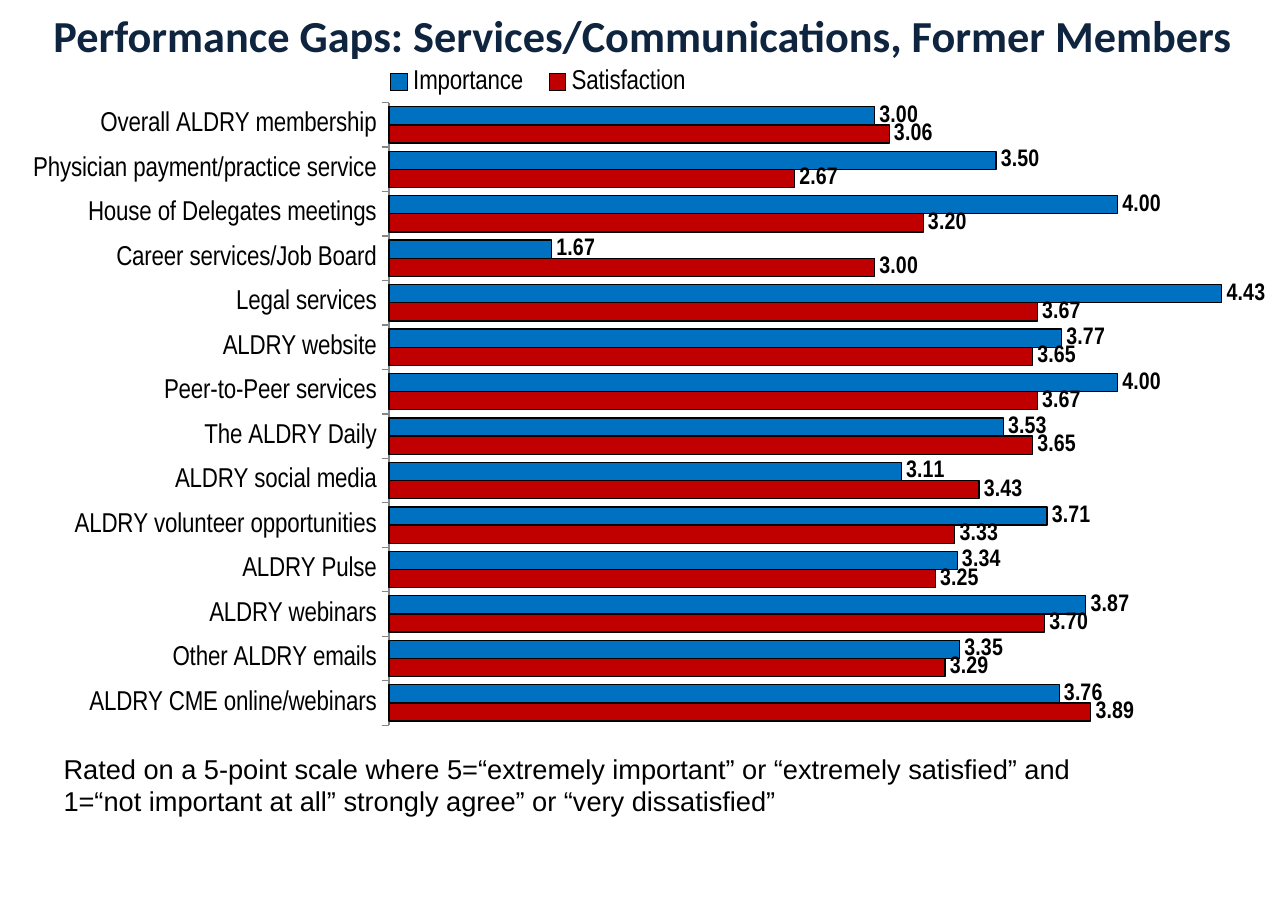
from lxml import etree
from pptx import Presentation
from pptx.chart.data import CategoryChartData
from pptx.dml.color import RGBColor
from pptx.enum.chart import XL_CHART_TYPE, XL_LABEL_POSITION, XL_LEGEND_POSITION, XL_TICK_MARK
from pptx.enum.text import MSO_ANCHOR, PP_ALIGN
from pptx.oxml.ns import qn
from pptx.util import Inches, Pt

BAR_CLUSTERED = XL_CHART_TYPE.BAR_CLUSTERED
OUTSIDE_END = XL_LABEL_POSITION.OUTSIDE_END
LEGEND_RIGHT = XL_LEGEND_POSITION.RIGHT
TICK_OUT, TICK_NONE = XL_TICK_MARK.OUTSIDE, XL_TICK_MARK.NONE
MIDDLE, CENTER = MSO_ANCHOR.MIDDLE, PP_ALIGN.CENTER

NAVY = RGBColor(0x0F, 0x24, 0x3E)
BLACK = RGBColor(0, 0, 0)
GRAY = RGBColor(0x86, 0x86, 0x86)
RED = RGBColor(0xC0, 0, 0)
BLUE = RGBColor(0, 0x70, 0xC0)

RATINGS = [
    ("ALDRY CME online/webinars", 3.89, 3.76),
    ("Other ALDRY emails", 3.29, 3.35),
    ("ALDRY webinars", 3.70, 3.87),
    ("ALDRY Pulse", 3.25, 3.34),
    ("ALDRY volunteer opportunities", 3.33, 3.71),
    ("ALDRY social media", 3.43, 3.11),
    ("The ALDRY Daily", 3.65, 3.53),
    ("Peer-to-Peer services", 3.67, 4.00),
    ("ALDRY website", 3.65, 3.77),
    ("Legal services", 3.67, 4.43),
    ("Career services/Job Board", 3.00, 1.67),
    ("House of Delegates meetings", 3.20, 4.00),
    ("Physician payment/practice service", 2.67, 3.50),
    ("Overall ALDRY membership", 3.06, 3.00),
]


def set_font(font, name, size, color, bold=False):
    font.name = name
    font.size = Pt(size)
    font.color.rgb = color
    font.bold = bold


def set_layout(parent, index, x, y, w, h, inner=False):
    for old in parent.findall(qn("c:layout")):
        parent.remove(old)
    layout = etree.Element(qn("c:layout"))
    manual = etree.SubElement(layout, qn("c:manualLayout"))
    settings = [("xMode", "edge"), ("yMode", "edge"), ("x", x), ("y", y), ("w", w), ("h", h)]
    if inner:
        settings.insert(0, ("layoutTarget", "inner"))
    for tag, value in settings:
        etree.SubElement(manual, qn("c:" + tag)).set("val", str(value))
    parent.insert(index, layout)


prs = Presentation()
prs.slide_width, prs.slide_height = Inches(10.5), Inches(7.5)
slide = prs.slides.add_slide(prs.slide_layouts[5])

categories, satisfaction, importance = zip(*RATINGS)
data = CategoryChartData(number_format="0.00")
data.categories = categories
data.add_series("Satisfaction", satisfaction)
data.add_series("Importance", importance)
chart = slide.shapes.add_chart(
    BAR_CLUSTERED, Inches(-0.08), Inches(0.56), Inches(11.17), Inches(5.44), data
).chart
chart.has_title = False
set_font(chart.font, "Calibri", 16, BLACK)

plot = chart.plots[0]
plot.gap_width = 45
plot.overlap = 0
plot.vary_by_categories = False
for series, color in zip(plot.series, (RED, BLUE)):
    series.format.fill.solid()
    series.format.fill.fore_color.rgb = color
    series.format.line.color.rgb = BLACK
    series.format.line.width = Pt(0.75)
    labels = series.data_labels
    labels.show_value = True
    labels.number_format = "0.00"
    labels.number_format_is_linked = False
    labels.position = OUTSIDE_END
    set_font(labels.font, "Arial Narrow", 14, BLACK, True)

axis = chart.category_axis
axis.major_tick_mark = TICK_OUT
axis.minor_tick_mark = TICK_NONE
axis.format.line.color.rgb = GRAY
set_font(axis.tick_labels.font, "Arial Narrow", 16, BLACK)

axis = chart.value_axis
axis.minimum_scale, axis.maximum_scale, axis.major_unit = 1, 5, 1
axis.has_major_gridlines = False
axis.visible = False

chart.has_legend = True
legend = chart.legend
legend.position = LEGEND_RIGHT
legend.include_in_layout = False
set_font(legend.font, "Arial Narrow", 16, BLACK)
set_layout(legend._element, 1, 0.28, 0, 0.24, 0.04)
set_layout(chart._chartSpace.chart.plotArea, 0, 0.291, 0.051, 0.709, 0.933, True)

title = slide.shapes.title
title.left, title.top, title.width, title.height = Inches(0.08), Inches(0.02), Inches(10.33), Inches(0.53)
tf = title.text_frame
tf.text = "Performance Gaps: Services/Communications, Former Members"
tf.vertical_anchor = MIDDLE
p = tf.paragraphs[0]
p.alignment = CENTER
set_font(p.runs[0].font, "Calibri", 26, NAVY, True)

note = slide.shapes.add_textbox(Inches(0.42), Inches(6.08), Inches(9), Inches(0.64))
tf = note.text_frame
tf.word_wrap = True
tf.text = (
    "Rated on a 5-point scale where 5=“extremely important” or “extremely satisfied” "
    "and 1=“not important at all” strongly agree” or “very dissatisfied”"
)
set_font(tf.paragraphs[0].runs[0].font, "Arial", 16, BLACK)

prs.save("out.pptx")
